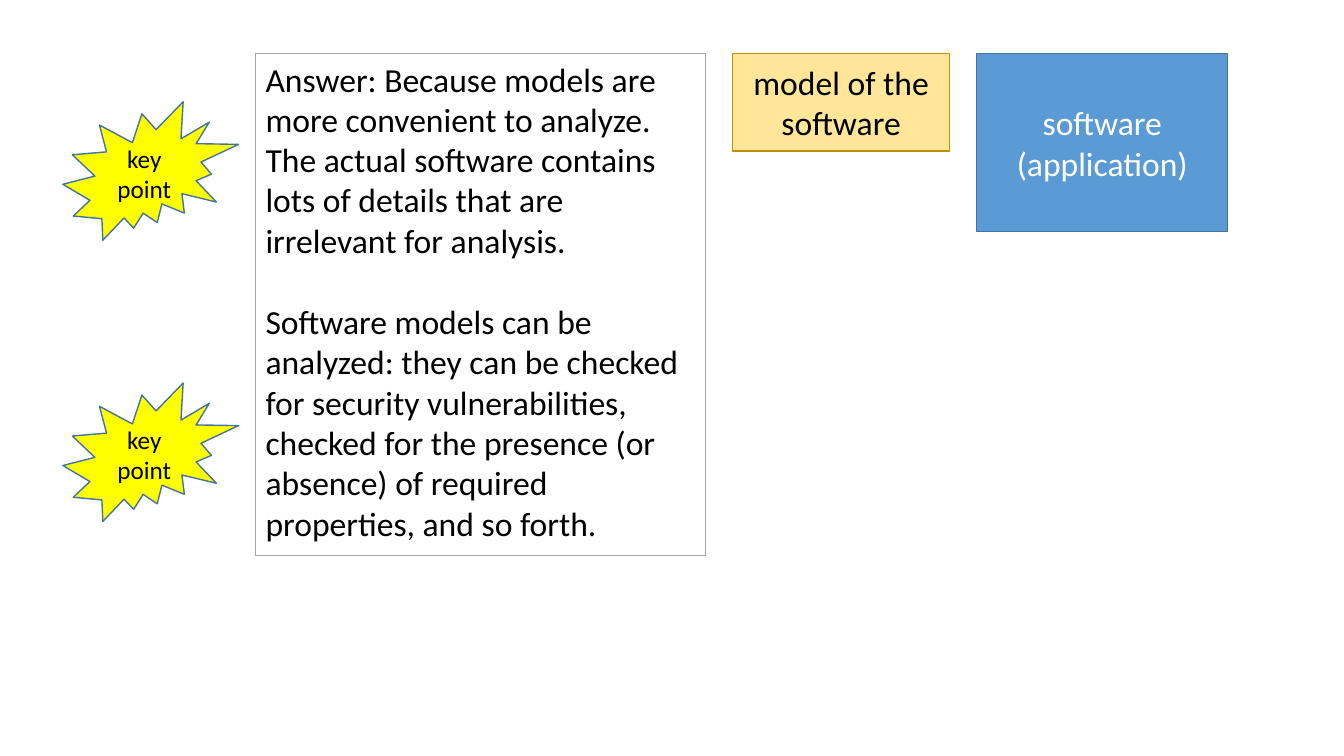
"""Build a slide explaining why software models are easier to analyze."""
from pptx import Presentation
from pptx.dml.color import RGBColor
from pptx.enum.shapes import MSO_SHAPE
from pptx.enum.text import MSO_ANCHOR, MSO_AUTO_SIZE, PP_ALIGN
from pptx.util import Pt

BLACK = RGBColor(0x00, 0x00, 0x00)
WHITE = RGBColor(0xFF, 0xFF, 0xFF)
BLUE = RGBColor(0x5B, 0x9B, 0xD5)
DARK_BLUE = RGBColor(0x43, 0x73, 0x9E)
CREAM = RGBColor(0xFF, 0xE6, 0x99)
GOLD = RGBColor(0xBF, 0x90, 0x00)
YELLOW = RGBColor(0xFF, 0xFF, 0x00)
GRAY = RGBColor(0xA6, 0xA6, 0xA6)

APPLICATION = ["software", "(application)"]
MODEL = ["model of the software"]
KEY_POINT = ["key", "point"]
ANSWER = [
    "Answer: Because models are more convenient to analyze. The actual "
    "software contains lots of details that are irrelevant for analysis.",
    "Software models can be analyzed: they can be checked for security "
    "vulnerabilities, checked for the presence (or absence) of required "
    "properties, and so forth.",
]

TOP = 38.2
ANSWER_GAP = 29.3
SEAL_TOPS = (72.7, 273.6)
BOXES = [
    (APPLICATION, (697.7, TOP, 179.3, 127.4), BLUE, DARK_BLUE, WHITE),
    (MODEL, (523.4, TOP, 154.8, 69.8), CREAM, GOLD, BLACK),
]


def write(owner, paragraphs, size=24, color=BLACK, align=PP_ALIGN.CENTER,
          anchor=MSO_ANCHOR.MIDDLE, gap=0):
    """Fill a shape with formatted paragraphs separated by a gap."""
    frame = owner.text_frame
    frame.word_wrap = True
    frame.vertical_anchor = anchor
    for index, words in enumerate(paragraphs):
        paragraph = frame.paragraphs[0] if index == 0 else frame.add_paragraph()
        paragraph.alignment = align
        if index and gap:
            paragraph.space_before = Pt(gap)
        run = paragraph.add_run()
        run.text = words
        run.font.name = "Calibri"
        run.font.size = Pt(size)
        run.font.color.rgb = color


def draw(slide, kind, place, fill, line):
    """Add a filled and outlined preset shape without a shadow."""
    drawn = slide.shapes.add_shape(kind, *map(Pt, place))
    drawn.shadow.inherit = False
    drawn.fill.solid()
    drawn.fill.fore_color.rgb = fill
    drawn.line.color.rgb = line
    drawn.line.width = Pt(1)
    return drawn


def main():
    """Compose and save the slide."""
    deck = Presentation()
    deck.slide_width, deck.slide_height = Pt(960), Pt(540)
    slide = deck.slides.add_slide(deck.slide_layouts[6])

    for words, place, fill, line, color in BOXES:
        box = draw(slide, MSO_SHAPE.RECTANGLE, place, fill, line)
        write(box, words, color=color)

    answer = slide.shapes.add_textbox(Pt(182.6), Pt(TOP), Pt(321.5), Pt(358.8))
    answer.line.color.rgb = GRAY
    answer.line.width = Pt(0.75)
    write(answer, ANSWER, align=PP_ALIGN.LEFT, anchor=MSO_ANCHOR.TOP, gap=ANSWER_GAP)
    answer.text_frame.auto_size = MSO_AUTO_SIZE.SHAPE_TO_FIT_TEXT

    for top in SEAL_TOPS:
        seal = draw(slide, MSO_SHAPE.EXPLOSION2, (44.9, top, 125.5, 98.9),
                    YELLOW, DARK_BLUE)
        write(seal, KEY_POINT, size=18)

    deck.save("out.pptx")


if __name__ == "__main__":
    main()
